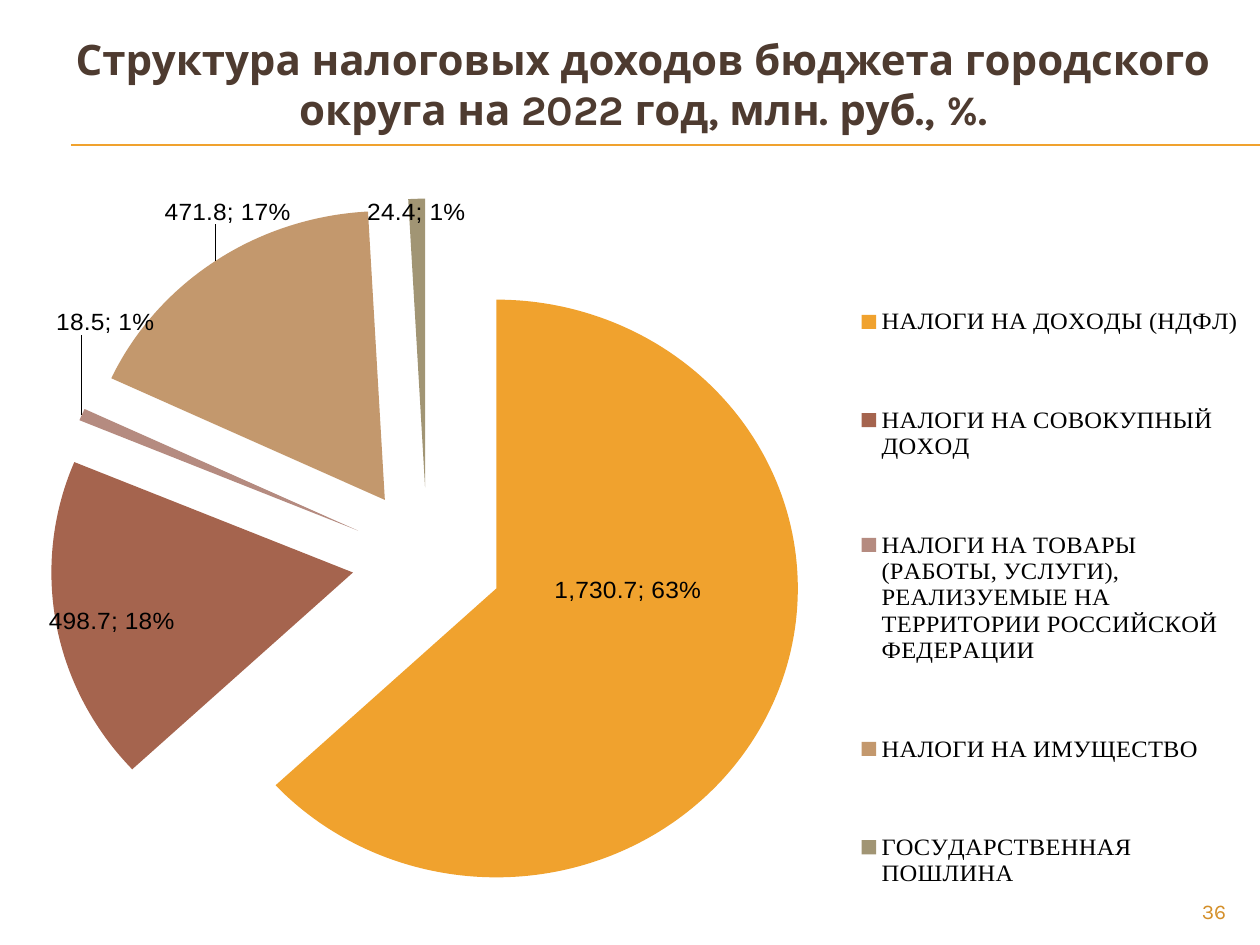
from pptx import Presentation
from pptx.chart.data import CategoryChartData
from pptx.dml.color import RGBColor
from pptx.enum.chart import XL_CHART_TYPE, XL_LABEL_POSITION, XL_LEGEND_POSITION
from pptx.enum.shapes import MSO_CONNECTOR
from pptx.enum.text import MSO_ANCHOR, PP_ALIGN
from pptx.oxml import parse_xml
from pptx.oxml.ns import nsdecls, qn
from pptx.util import Cm, Pt

ORANGE = RGBColor(0xF0, 0xA2, 0x2E)
RUST = RGBColor(0xA5, 0x64, 0x4E)
ROSE = RGBColor(0xB5, 0x8B, 0x80)
TAN = RGBColor(0xC3, 0x98, 0x6D)
OLIVE = RGBColor(0xA1, 0x95, 0x74)
BROWN = RGBColor(0x4E, 0x3B, 0x30)
DARK_ORANGE = RGBColor(0xD4, 0x8F, 0x29)
BLACK = RGBColor(0, 0, 0)

OUTSIDE = XL_LABEL_POSITION.OUTSIDE_END
CENTER = XL_LABEL_POSITION.CENTER
TAXES = [
    ("НАЛОГИ НА ДОХОДЫ (НДФЛ)", 1730.7, ORANGE, OUTSIDE, (-0.17, -0.17)),
    ("НАЛОГИ НА СОВОКУПНЫЙ ДОХОД", 498.7, RUST, CENTER, (-0.07, 0.03)),
    ("НАЛОГИ НА ТОВАРЫ (РАБОТЫ, УСЛУГИ), РЕАЛИЗУЕМЫЕ НА ТЕРРИТОРИИ РОССИЙСКОЙ ФЕДЕРАЦИИ",
     18.5, ROSE, OUTSIDE, (0.06, -0.1)),
    ("НАЛОГИ НА ИМУЩЕСТВО", 471.8, TAN, OUTSIDE, (0.06, -0.04)),
    ("ГОСУДАРСТВЕННАЯ ПОШЛИНА", 24.4, OLIVE, OUTSIDE, None),
]


def write(box, text, size, color, align, anchor=MSO_ANCHOR.TOP, bold=False):
    frame = box.text_frame
    frame.word_wrap = True
    frame.vertical_anchor = anchor
    para = frame.paragraphs[0]
    para.alignment = align
    span = para.add_run()
    span.text = text
    span.font.name = "Karla"
    span.font.size = Pt(size)
    span.font.bold = bold
    span.font.color.rgb = color


def manual_layout(**settings):
    items = "".join(f'<c:{name} val="{value}"/>' for name, value in settings.items())
    return parse_xml(f'<c:layout {nsdecls("c")}><c:manualLayout>{items}</c:manualLayout></c:layout>')


deck = Presentation()
deck.slide_width, deck.slide_height = Cm(25.4), Cm(19.05)
page = deck.slides.add_slide(deck.slide_layouts[5])

for top in (2.92, 2.94):
    rule = page.shapes.add_connector(MSO_CONNECTOR.STRAIGHT, Cm(1.43), Cm(top), Cm(25.4), Cm(top))
    rule.line.color.rgb = ORANGE
    rule.line.width = Pt(0.75)
    rule._element.spPr.append(parse_xml(f'<a:effectLst {nsdecls("a")}/>'))

title = page.shapes.title
title.left, title.top, title.width, title.height = Cm(0.9), Cm(0.52), Cm(24.13), Cm(2.34)
write(title, "Структура налоговых доходов бюджета городского округа на 2022 год, млн. руб., %.",
      size=24, color=BROWN, align=PP_ALIGN.CENTER, anchor=MSO_ANCHOR.MIDDLE, bold=True)

number = page.shapes.add_textbox(Cm(22.86), Cm(17.98), Cm(2.11), Cm(0.69))
write(number, "36", size=12, color=DARK_ORANGE, align=PP_ALIGN.RIGHT)

data = CategoryChartData(number_format="#,##0.0")
data.categories = [tax[0] for tax in TAXES]
data.add_series("Series 1", [tax[1] for tax in TAXES])
chart = page.shapes.add_chart(XL_CHART_TYPE.PIE, Cm(-1.4), Cm(3.33), Cm(26.7), Cm(16), data).chart
chart.has_title = False
chart.font.name = "Arial"
chart.font.size = Pt(14)
chart.font.color.rgb = BLACK

plot_area = chart._chartSpace.chart.plotArea
for old_layout in plot_area.findall(qn("c:layout")):
    plot_area.remove(old_layout)
plot_area.insert(0, manual_layout(layoutTarget="inner", xMode="edge", yMode="edge",
                                  x=0.06, y=0, w=0.63, h=0.95))

chart.has_legend = True
legend = chart.legend
legend.position = XL_LEGEND_POSITION.RIGHT
legend.include_in_layout = False
legend.font.name = "Times New Roman"
legend.font.size = Pt(14)
legend.font.color.rgb = BLACK
for old_layout in legend._element.findall(qn("c:layout")):
    legend._element.remove(old_layout)
legend._element.find(qn("c:legendPos")).addnext(
    manual_layout(xMode="edge", yMode="edge", x=0.7, y=0.05, w=0.29, h=0.95))

chart.plots[0].vary_by_categories = True
series = chart.plots[0].series[0]
series._element.find(qn("c:cat")).addprevious(
    parse_xml(f'<c:explosion {nsdecls("c")} val="25"/>'))

labels = series.data_labels
labels.show_value = True
labels.show_percentage = True
labels.position = OUTSIDE
label_set = labels._element

for index, (name, value, color, position, shift) in enumerate(TAXES):
    point = series.points[index]
    point.format.fill.solid()
    point.format.fill.fore_color.rgb = color
    if shift:
        point.data_label.position = position
        label = label_set.findall(qn("c:dLbl"))[-1]
        label.find(qn("c:showPercent")).set("val", "1")
        label.find(qn("c:idx")).addnext(manual_layout(x=shift[0], y=shift[1]))

for label in [label_set, *label_set.findall(qn("c:dLbl"))]:
    label.find(qn("c:showBubbleSize")).addnext(
        parse_xml(f'<c:separator {nsdecls("c")}>; </c:separator>'))

deck.save("out.pptx")
